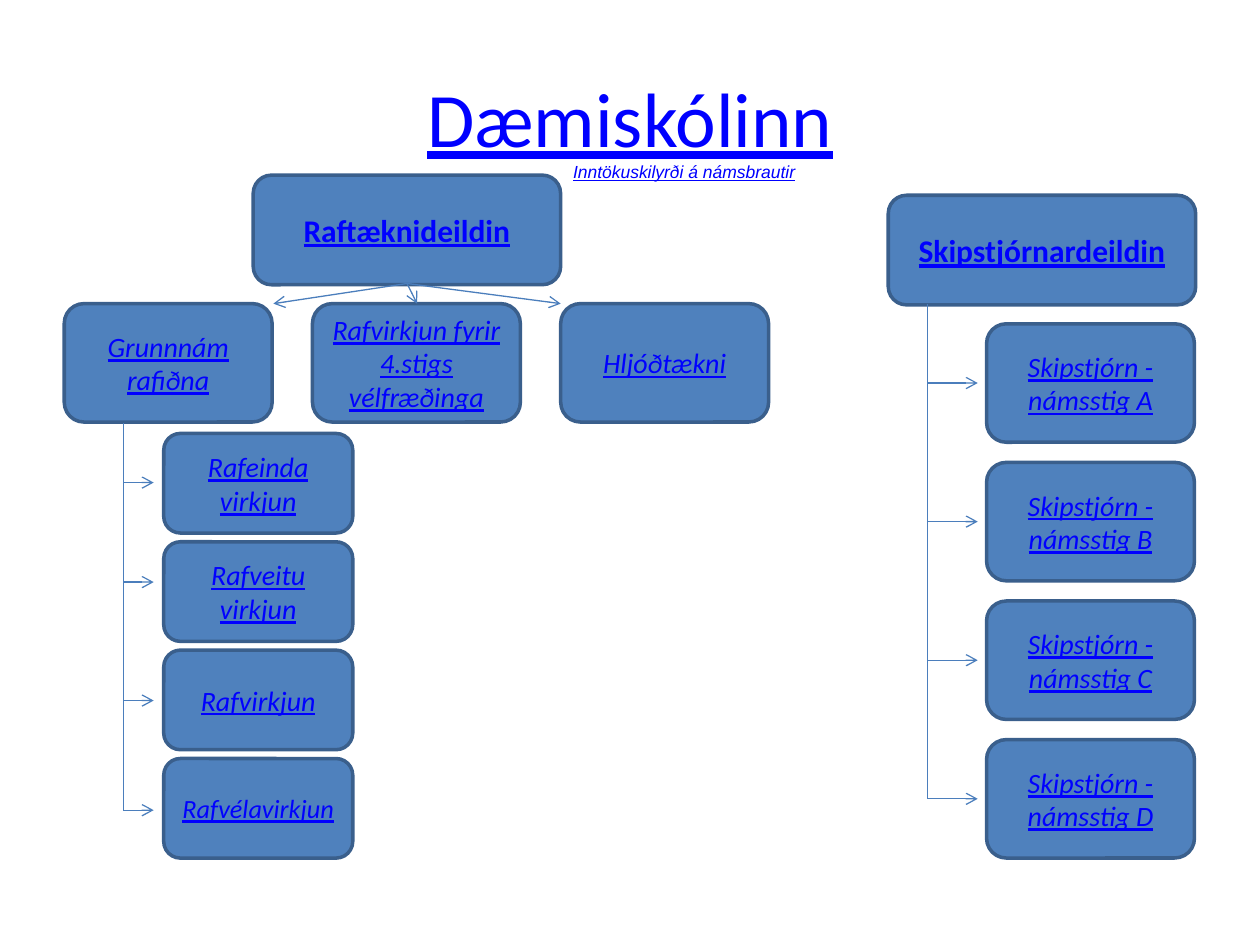
from dataclasses import dataclass

from lxml import etree
from pptx import Presentation
from pptx import util as u
from pptx.dml.color import RGBColor
from pptx.enum import shapes, text
from pptx.oxml.ns import qn
from pptx.slide import Slide
from pptx.text.text import TextFrame

LINK_BLUE = RGBColor(0x00, 0x00, 0xFF)
BOX_FILL = RGBColor(0x4F, 0x81, 0xBD)
BOX_BORDER = RGBColor(0x3A, 0x5F, 0x8C)
ARROW_BLUE = RGBColor(0x4B, 0x7E, 0xBC)


@dataclass(frozen=True)
class Size:
    width: float
    height: float


@dataclass(frozen=True)
class Style:
    size: float
    bold: bool = False
    italic: bool = False
    font: str = "Calibri"


@dataclass(frozen=True)
class Box:
    label: str
    left: float
    top: float
    size: Size
    style: Style


@dataclass(frozen=True)
class Trunk:
    x: float
    top: float
    tip: float
    branches: tuple[float, ...]


DEPARTMENT = Size(2.44, 0.87)
PROGRAMME = Size(1.65, 0.94)
TRADE = Size(1.5, 0.79)

TITLE_STYLE = Style(44)
DEPARTMENT_STYLE = Style(18, bold=True)
PROGRAMME_STYLE = Style(16, italic=True)
LONG_STYLE = Style(15, italic=True)
ADMISSION_STYLE = Style(10, italic=True, font="Arial")

DEPARTMENTS = [
    Box("Raftæknideildin", 2.01, 1.39, DEPARTMENT, DEPARTMENT_STYLE),
    Box("Skipstjórnardeildin", 7.05, 1.55, DEPARTMENT, DEPARTMENT_STYLE),
]
PROGRAMMES = [
    Box(label, 0.51 + 1.97 * column, 2.41, PROGRAMME, PROGRAMME_STYLE)
    for column, label in enumerate(
        ["Grunnnám rafiðna", "Rafvirkjun fyrir 4.stigs vélfræðinga", "Hljóðtækni"]
    )
]
TRADES = [
    Box(label, 1.3, 3.44 + 0.86 * row, TRADE, style)
    for row, (label, style) in enumerate(
        [
            ("Rafeinda\nvirkjun", PROGRAMME_STYLE),
            ("Rafveitu\nvirkjun", PROGRAMME_STYLE),
            ("Rafvirkjun", PROGRAMME_STYLE),
            ("Rafvélavirkjun", LONG_STYLE),
        ]
    )
]
CAPTAIN_LEVELS = [
    Box(f"Skipstjórn - námsstig {level}", 7.83, 2.57 + 1.1 * row, PROGRAMME, PROGRAMME_STYLE)
    for row, level in enumerate("ABCD")
]

TRUNKS = [
    Trunk(0.98, 3.36, 1.22, (3.83, 4.62, 5.56, 6.43)),
    Trunk(7.36, 2.41, 7.76, tuple(box.top + PROGRAMME.height / 2 for box in CAPTAIN_LEVELS)),
]
FAN_START = (3.23, 2.25)
FAN_TIPS = [(2.17, 2.41), (3.31, 2.41), (4.45, 2.41)]


def write_label(
    frame: TextFrame, label: str, style: Style, align: text.PP_ALIGN, anchor: text.MSO_ANCHOR
) -> None:
    frame.word_wrap = True
    frame.vertical_anchor = anchor
    frame.text = label
    for paragraph in frame.paragraphs:
        paragraph.alignment = align
        font = paragraph.font
        font.name = style.font
        font.size = u.Pt(style.size)
        font.bold = style.bold
        font.italic = style.italic
        font.underline = True
        font.color.rgb = LINK_BLUE


def draw_text(
    slide: Slide, box: Box, align: text.PP_ALIGN, anchor: text.MSO_ANCHOR
) -> None:
    caption = slide.shapes.add_textbox(
        u.Inches(box.left), u.Inches(box.top), u.Inches(box.size.width), u.Inches(box.size.height)
    )
    write_label(caption.text_frame, box.label, box.style, align, anchor)


def draw_box(slide: Slide, box: Box) -> None:
    node = slide.shapes.add_shape(
        shapes.MSO_SHAPE.ROUNDED_RECTANGLE,
        u.Inches(box.left),
        u.Inches(box.top),
        u.Inches(box.size.width),
        u.Inches(box.size.height),
    )
    node.shadow.inherit = False
    node.fill.solid()
    node.fill.fore_color.rgb = BOX_FILL
    node.line.color.rgb = BOX_BORDER
    node.line.width = u.Pt(2)
    write_label(
        node.text_frame, box.label, box.style, text.PP_ALIGN.CENTER, text.MSO_ANCHOR.MIDDLE
    )


def draw_line(
    slide: Slide, start: tuple[float, float], end: tuple[float, float], arrow: bool = True
) -> None:
    link = slide.shapes.add_connector(
        shapes.MSO_CONNECTOR.STRAIGHT, *(u.Inches(value) for value in (*start, *end))
    )
    link.line.color.rgb = ARROW_BLUE
    link.line.width = u.Pt(0.75)
    properties = link._element.spPr
    if arrow:
        etree.SubElement(properties.find(qn("a:ln")), qn("a:tailEnd"), type="arrow")
    etree.SubElement(properties, qn("a:effectLst"))


def draw_trunk(slide: Slide, trunk: Trunk) -> None:
    draw_line(slide, (trunk.x, trunk.top), (trunk.x, trunk.branches[-1]), arrow=False)
    for y in trunk.branches:
        draw_line(slide, (trunk.x, y), (trunk.tip, y))


def main() -> None:
    deck = Presentation()
    deck.slide_width, deck.slide_height = u.Inches(10), u.Inches(7.5)
    slide = deck.slides.add_slide(deck.slide_layouts[6])

    title = Box("Dæmiskólinn", 0.5, 0.3, Size(9, 1.25), TITLE_STYLE)
    draw_text(slide, title, text.PP_ALIGN.CENTER, text.MSO_ANCHOR.MIDDLE)
    for box in DEPARTMENTS + PROGRAMMES + TRADES + CAPTAIN_LEVELS:
        draw_box(slide, box)
    for tip in FAN_TIPS:
        draw_line(slide, FAN_START, tip)
    for trunk in TRUNKS:
        draw_trunk(slide, trunk)
    admission = Box(
        "Inntökuskilyrði á námsbrautir", 4.45, 1.23, Size(2.99, 0.27), ADMISSION_STYLE
    )
    draw_text(slide, admission, text.PP_ALIGN.LEFT, text.MSO_ANCHOR.TOP)

    deck.save("out.pptx")


if __name__ == "__main__":
    main()
